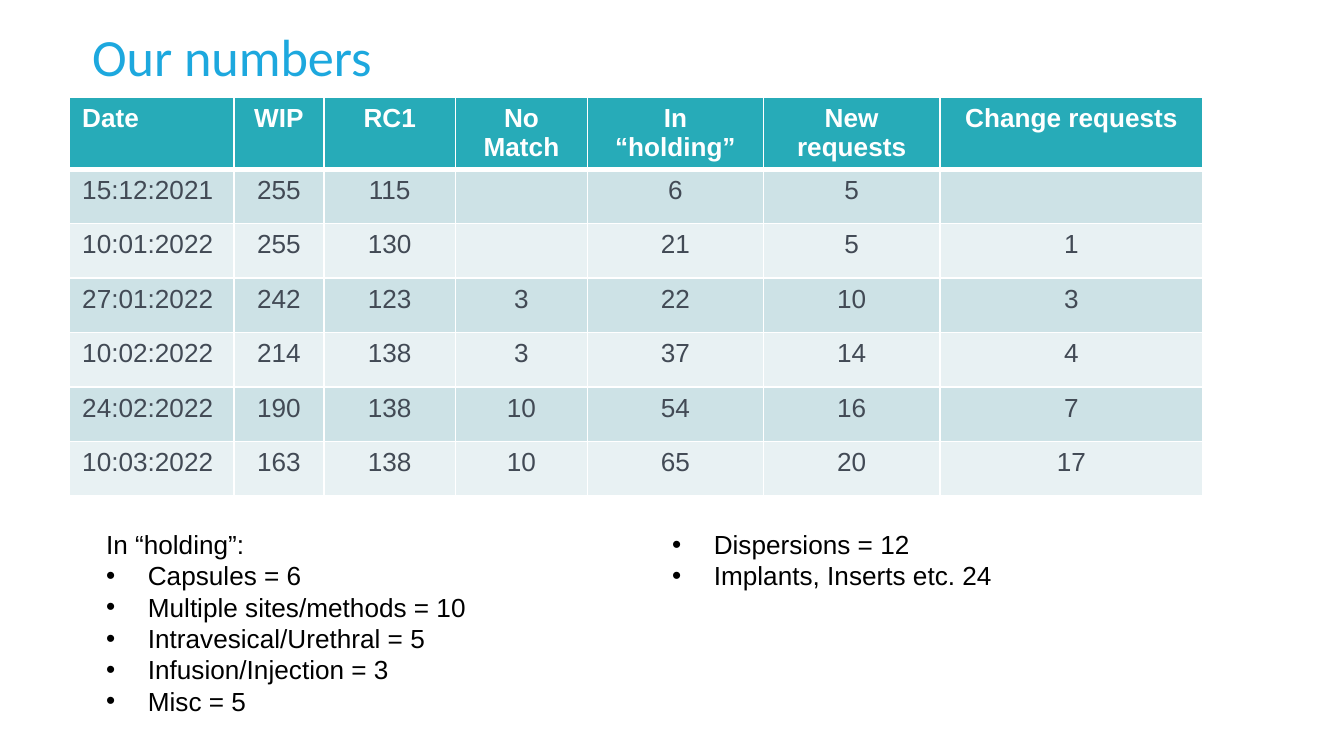
from lxml import etree
from pptx import Presentation
from pptx.dml.color import RGBColor
from pptx.enum.text import MSO_ANCHOR, MSO_AUTO_SIZE, PP_ALIGN
from pptx.oxml.ns import qn
from pptx.util import Cm, Pt

LEFT, CENTER = PP_ALIGN.LEFT, PP_ALIGN.CENTER
TOP, MIDDLE = MSO_ANCHOR.TOP, MSO_ANCHOR.MIDDLE
NO_FIT = MSO_AUTO_SIZE.NONE

COLORS = {
    "title": "1DA8DE",
    "header": "27ABB8",
    "odd": "CDE2E6",
    "even": "E8F1F3",
    "figure": "424A55",
    "white": "FFFFFF",
    "black": "000000",
}

HEADINGS = ["Date", "WIP", "RC1", "No Match", "In “holding”", "New requests", "Change requests"]
COUNTS = [
    ["15:12:2021", 255, 115, "", 6, 5, ""],
    ["10:01:2022", 255, 130, "", 21, 5, 1],
    ["27:01:2022", 242, 123, 3, 22, 10, 3],
    ["10:02:2022", 214, 138, 3, 37, 14, 4],
    ["24:02:2022", 190, 138, 10, 54, 16, 7],
    ["10:03:2022", 163, 138, 10, 65, 20, 17],
]
HOLDING_HEADING = "In “holding”:"
HOLDING = [
    "Capsules = 6",
    "Multiple sites/methods = 10",
    "Intravesical/Urethral = 5",
    "Infusion/Injection = 3",
    "Misc = 5",
    "Dispersions = 12",
    "Implants, Inserts etc. 24",
]

COLUMN_WIDTHS = [3.12, 1.7, 2.49, 2.49, 3.33, 3.33, 4.98]
ROW_HEIGHT = 1.03
INDENT = Cm(0.79)

TITLE_FONT = {"name": "Calibri", "size": Pt(28), "bold": False}
HEADER_FONT = {"name": "Arial", "size": Pt(14), "bold": True}
TEXT_FONT = {"name": "Arial", "size": Pt(14), "bold": False}
TITLE_FRAME = {
    "word_wrap": True, "auto_size": NO_FIT, "vertical_anchor": MIDDLE,
    "margin_left": Cm(0.19), "margin_right": Cm(0.19),
    "margin_top": Cm(0.1), "margin_bottom": Cm(0.1),
}
HOLDING_FRAME = {"word_wrap": True, "auto_size": NO_FIT, "vertical_anchor": TOP}
TITLE_PARAGRAPH = {"alignment": LEFT, "line_spacing": 0.9}
HOLDING_PARAGRAPH = {
    "alignment": LEFT, "line_spacing": Pt(16.8),
    "space_before": Pt(0), "space_after": Pt(0),
}


def apply(target, values):
    for key, value in values.items():
        setattr(target, key, value)


def style_font(font, values, color):
    apply(font, values)
    font.color.rgb = RGBColor.from_string(COLORS[color])


def place(shape, left, top, width, height):
    apply(shape, {"left": Cm(left), "top": Cm(top), "width": Cm(width), "height": Cm(height)})


def add_border(cell, side, points):
    line = etree.SubElement(cell._tc.get_or_add_tcPr(), qn(f"a:ln{side}"), w=str(Pt(points)))
    fill = etree.SubElement(line, qn("a:solidFill"))
    etree.SubElement(fill, qn("a:srgbClr"), val=COLORS["white"])


def set_bullet(paragraph, shown):
    properties = paragraph._p.get_or_add_pPr()
    properties.set("marL", str(INDENT if shown else 0))
    properties.set("indent", str(-INDENT if shown else 0))
    if shown:
        color = etree.SubElement(properties, qn("a:buClr"))
        etree.SubElement(color, qn("a:srgbClr"), val=COLORS["black"])
        etree.SubElement(properties, qn("a:buChar"), char="•")
    else:
        etree.SubElement(properties, qn("a:buNone"))


def add_title(slide):
    title = slide.shapes.title
    place(title, 1.55, 0.2, 21.9, 1.85)
    apply(title.text_frame, TITLE_FRAME)
    title.text_frame.text = "Our numbers"
    paragraph = title.text_frame.paragraphs[0]
    apply(paragraph, TITLE_PARAGRAPH)
    style_font(paragraph.font, TITLE_FONT, "title")


def add_counts(slide):
    rows = [HEADINGS] + COUNTS
    counts = slide.shapes.add_table(
        len(rows), len(HEADINGS), Cm(1.3), Cm(1.83),
        Cm(sum(COLUMN_WIDTHS)), Cm(ROW_HEIGHT * len(rows)),
    ).table
    for column, width in zip(counts.columns, COLUMN_WIDTHS):
        column.width = Cm(width)
    for r, row in enumerate(rows):
        counts.rows[r].height = Cm(ROW_HEIGHT)
        band = "header" if r == 0 else "odd" if r % 2 else "even"
        borders = {"L": 1, "R": 1, "T": 3 if r == 1 else 1, "B": 3 if r == 0 else 1}
        for c, value in enumerate(row):
            cell = counts.cell(r, c)
            for side, points in borders.items():
                add_border(cell, side, points)
            cell.fill.solid()
            cell.fill.fore_color.rgb = RGBColor.from_string(COLORS[band])
            cell.text = str(value)
            paragraph = cell.text_frame.paragraphs[0]
            paragraph.alignment = CENTER if c else LEFT
            if r:
                style_font(paragraph.font, TEXT_FONT, "figure")
            else:
                style_font(paragraph.font, HEADER_FONT, "white")


def add_holding(slide):
    holding = slide.placeholders[1]
    place(holding, 1.75, 9.86, 21.9, 3.9)
    frame = holding.text_frame
    apply(frame, HOLDING_FRAME)
    frame._txBody.bodyPr.set("numCol", "2")
    frame.text = "\n".join([HOLDING_HEADING] + HOLDING)
    for i, paragraph in enumerate(frame.paragraphs):
        apply(paragraph, HOLDING_PARAGRAPH)
        set_bullet(paragraph, i > 0)
        style_font(paragraph.font, TEXT_FONT, "black")


def main():
    deck = Presentation()
    apply(deck, {"slide_width": Cm(25.4), "slide_height": Cm(14.29)})
    slide = deck.slides.add_slide(deck.slide_layouts[1])
    add_title(slide)
    add_counts(slide)
    add_holding(slide)
    deck.save("out.pptx")


if __name__ == "__main__":
    main()
